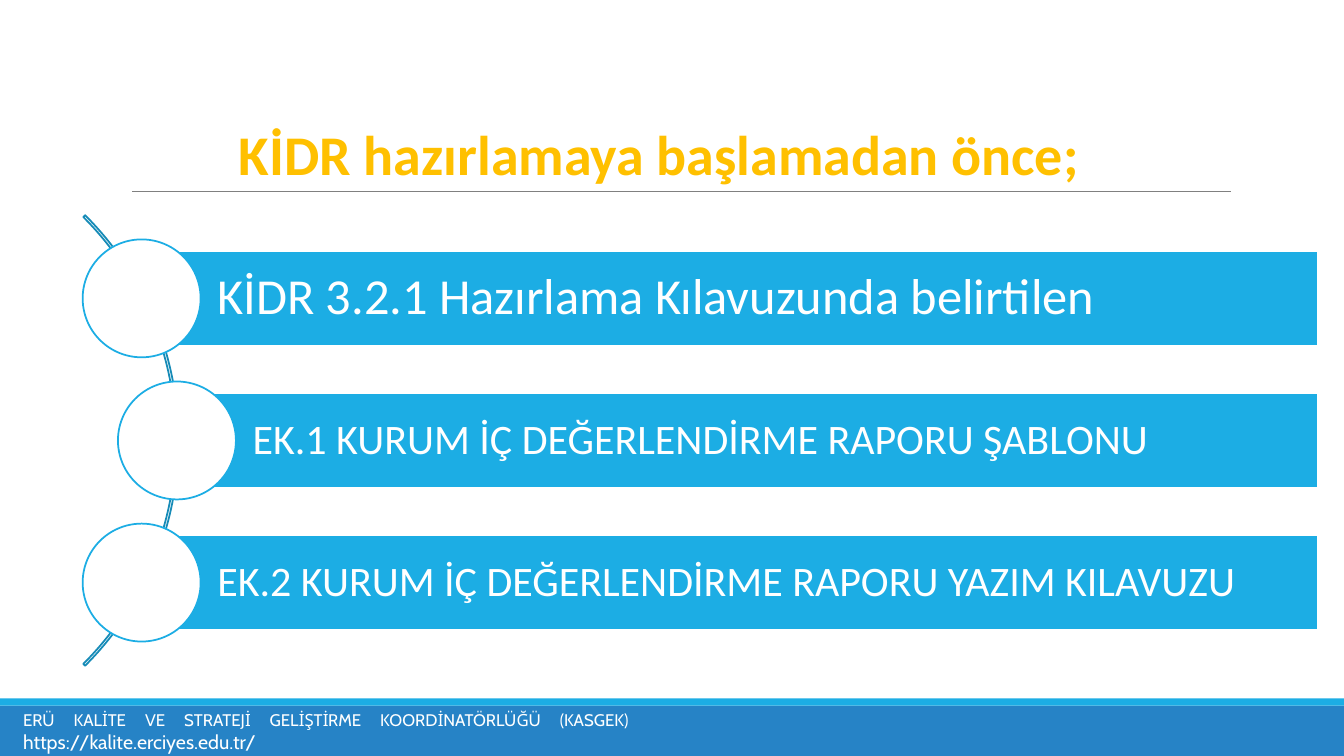
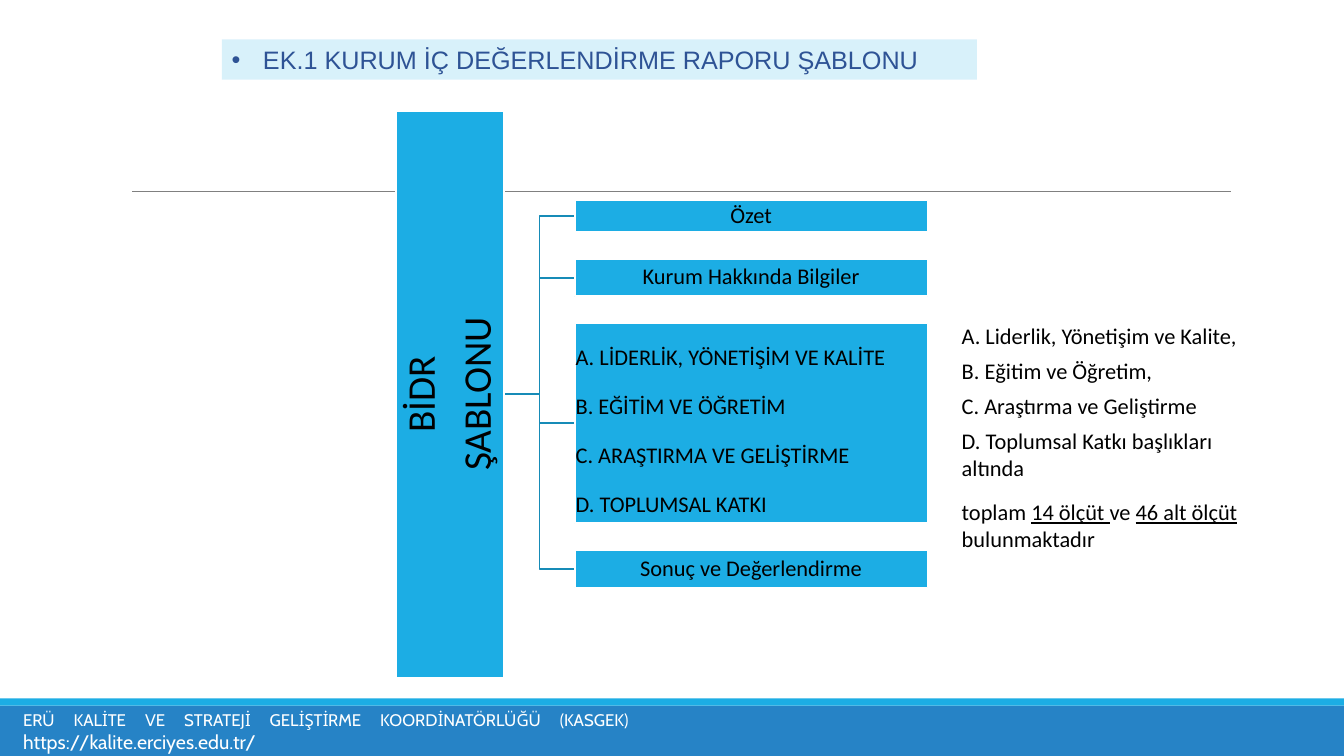
import dataclasses

import pptx
import pptx.dml.color
import pptx.enum.shapes
import pptx.enum.text
import pptx.oxml
import pptx.oxml.ns
import pptx.util

Inches, Pt = pptx.util.Inches, pptx.util.Pt
SHAPE = pptx.enum.shapes.MSO_SHAPE
ALIGN = pptx.enum.text.PP_ALIGN
ANCHOR = pptx.enum.text.MSO_ANCHOR


@dataclasses.dataclass(frozen=True)
class Theme:
    accent: str = "1CADE4"
    band: str = "2683C6"
    branch: str = "168BB7"
    rule: str = "808080"
    title: str = "FFC000"
    heading: str = "2E5395"
    white: str = "FFFFFF"
    black: str = "000000"
    body_font: str = "Calibri"
    heading_font: str = "Arial"
    footer_font: str = "Cabin"
    title_size: float = 40
    lead_size: float = 36
    item_size: float = 30
    label_size: float = 28
    heading_size: float = 18
    body_size: float = 16
    url_size: float = 14
    footer_size: float = 12
    line_width: float = 1.25
    rule_width: float = 0.5


T = Theme()
SLIDE_W, SLIDE_H = 13.33, 7.5


def rgb(value):
    return pptx.dml.color.RGBColor.from_string(value)


def set_outline(s, color, width=T.line_width):
    s.line.color.rgb = rgb(color)
    s.line.width = Pt(width)


def add_box(slide, box, fill=None, line=None, shape=SHAPE.RECTANGLE):
    s = slide.shapes.add_shape(shape, *map(Inches, box))
    s.shadow.inherit = False
    if fill:
        s.fill.solid()
        s.fill.fore_color.rgb = rgb(fill)
    else:
        s.fill.background()
    if line:
        set_outline(s, line)
    else:
        s.line.fill.background()
    return s


def write(s, paragraphs, size, color, font=T.body_font, bold=False,
          anchor=ANCHOR.MIDDLE, insets=(0.1, 0.05, 0.1, 0.05), **formats):
    """Fill a shape; a paragraph is a string or a list of (text, font values)."""
    tf = s.text_frame
    tf.word_wrap = True
    tf.vertical_anchor = anchor
    for side, inset in zip(("left", "top", "right", "bottom"), insets):
        setattr(tf, f"margin_{side}", Inches(inset))
    for i, content in enumerate(paragraphs):
        p = tf.paragraphs[0] if i == 0 else tf.add_paragraph()
        for name, value in ({"alignment": ALIGN.LEFT} | formats).items():
            if i or name != "space_before":
                setattr(p, name, value)
        runs = [(content, {})] if isinstance(content, str) else content
        for text, changes in runs:
            r = p.add_run()
            r.text = text
            values = {"name": font, "size": Pt(size), "bold": bold} | changes
            for name, value in values.items():
                setattr(r.font, name, value)
            r.font.color.rgb = rgb(color)
    return tf


def add_text(slide, box, paragraphs, size, color, **formats):
    s = slide.shapes.add_textbox(*map(Inches, box))
    return write(s, paragraphs, size, color, **formats)


def add_frame(slide):
    """Place the bands and the rule that every slide has."""
    add_box(slide, (0, 7, SLIDE_W, 0.5), T.band)
    add_box(slide, (0, 6.93, SLIDE_W, 0.07), T.accent)
    rule = slide.shapes.add_connector(
        pptx.enum.shapes.MSO_CONNECTOR.STRAIGHT,
        *map(Inches, (1.31, 1.9, 12.21, 1.9)))
    set_outline(rule, T.rule, T.rule_width)
    rule._element.spPr.append(pptx.oxml.parse_xml(
        f"<a:effectLst {pptx.oxml.ns.nsdecls('a')}/>"))


def add_footer(slide):
    add_text(slide, (0.13, 7.06, 6.21, 0.4), [[
        ("ERÜ KALİTE VE STRATEJİ GELİŞTİRME KOORDİNATÖRLÜĞÜ (KASGEK) ", {}),
        ("https://kalite.erciyes.edu.tr/", {"size": Pt(T.url_size)}),
    ]], T.footer_size, T.white, font=T.footer_font, alignment=ALIGN.JUSTIFY)


def add_curved_list(slide, box, items):
    """Place bars with round markers along an arc; items are (text, size)."""
    left, top, width, height = box
    bar_h, marker, inset, pitch = 0.94, 1.17, 0.35, 1.41
    arc_d = 6.32
    arc = add_box(slide, (left - 5.37, top + (height - arc_d) / 2, arc_d, arc_d),
                  line=T.branch, shape=SHAPE.BLOCK_ARC)
    for i, value in enumerate((189, 27, 0.004)):
        arc.adjustments[i] = value
    middle = (len(items) - 1) / 2
    for i, (text, size) in enumerate(items):
        x = left + (inset if i == middle else 0)
        y = top + height / 2 + (i - middle) * pitch
        bar_x = x + marker / 2
        bar = add_box(slide, (bar_x, y - bar_h / 2, left + width - bar_x, bar_h),
                      T.accent, T.white)
        write(bar, [text], size, T.white, insets=(0.75, 0.08, 0.08, 0.08),
              line_spacing=0.9)
        add_box(slide, (x, y - marker / 2, marker, marker),
                T.white, T.accent, SHAPE.OVAL)


def add_heading(slide, box, text):
    s = add_box(slide, box, T.accent)
    color = s.fill._xPr.find(".//" + pptx.oxml.ns.qn("a:srgbClr"))
    color.append(pptx.oxml.parse_xml(
        f"<a:alpha {pptx.oxml.ns.nsdecls('a')} val='17000'/>"))
    tf = write(s, [text], T.heading_size, T.heading, font=T.heading_font)
    pPr = tf.paragraphs[0]._p.get_or_add_pPr()
    pPr.set("marL", str(Inches(0.31)))
    pPr.set("indent", str(-Inches(0.31)))
    ns = pptx.oxml.ns.nsdecls("a")
    pPr.append(pptx.oxml.parse_xml(f"<a:buFont {ns} typeface='Arial'/>"))
    pPr.append(pptx.oxml.parse_xml(f"<a:buChar {ns} char='•'/>"))


def add_branch(slide, start, end):
    (x1, y1), (x2, y2) = start, end
    mid = (x1 + x2) / 2
    points = [(Inches(x), Inches(y))
              for x, y in ((x1, y1), (mid, y1), (mid, y2), (x2, y2))]
    builder = slide.shapes.build_freeform(*points[0])
    builder.add_line_segments(points[1:], close=False)
    s = builder.convert_to_shape()
    s.shadow.inherit = False
    s.fill.background()
    set_outline(s, T.branch)


def add_tree(slide, box, label, sections):
    """Place an upright label with branches; sections are (height, lines)."""
    left, top, width, height = box
    label_w, section_w, gap = 1.07, 3.5, 0.27
    root = (left + label_w, top + height / 2)
    section_x = left + width - section_w
    total = sum(h for h, _ in sections) + gap * (len(sections) - 1)
    y = root[1] - total / 2
    centred = {"alignment": ALIGN.CENTER, "line_spacing": 0.9}
    listed = {"line_spacing": 1.5, "space_before": Pt(6)}
    for section_h, lines in sections:
        add_branch(slide, root, (section_x, y + section_h / 2))
        s = add_box(slide, (section_x, y, section_w, section_h),
                    T.accent, T.white)
        write(s, lines, T.body_size, T.black, insets=(0.01,) * 4,
              **(listed if len(lines) > 1 else centred))
        y += section_h + gap
    s = add_box(slide, (left + (label_w - height) / 2,
                        top + (height - label_w) / 2, height, label_w),
                T.accent, T.white)
    s.rotation = 270
    write(s, label, T.label_size, T.black, insets=(0.02,) * 4,
          space_after=Pt(9.8), **centred)


def build_preparation(slide):
    add_frame(slide)
    add_text(slide, (1.91, 1.14, 9.25, 0.76),
             ["KİDR hazırlamaya başlamadan önce;"], T.title_size, T.title,
             bold=True, anchor=ANCHOR.BOTTOM, alignment=ALIGN.CENTER,
             line_spacing=0.85)
    add_curved_list(slide, (0.82, 2.02, 12.25, 4.7), [
        ("KİDR 3.2.1 Hazırlama Kılavuzunda belirtilen", T.lead_size),
        ("EK.1 KURUM İÇ DEĞERLENDİRME RAPORU ŞABLONU", T.item_size),
        ("EK.2 KURUM İÇ DEĞERLENDİRME RAPORU YAZIM KILAVUZU", T.item_size),
    ])
    add_footer(slide)


def build_template(slide):
    add_frame(slide)
    add_tree(slide, (3.93, 1.1, 5.27, 5.62), ["BİDR", "ŞABLONU"], [
        (0.31, ["Özet"]),
        (0.37, ["Kurum Hakkında Bilgiler"]),
        (1.98, ["A. LİDERLİK, YÖNETİŞİM VE KALİTE", "B. EĞİTİM VE ÖĞRETİM",
                "C. ARAŞTIRMA VE GELİŞTİRME", "D. TOPLUMSAL KATKI"]),
        (0.37, ["Sonuç ve Değerlendirme"]),
    ])
    add_heading(slide, (2.2, 0.39, 7.49, 0.4),
                "EK.1 KURUM İÇ DEĞERLENDİRME RAPORU ŞABLONU")
    add_footer(slide)
    underlined = {"underline": True}
    tf = add_text(slide, (9.44, 3.15, 3.08, 2.41), [
        "A. Liderlik, Yönetişim ve Kalite,",
        "B. Eğitim ve Öğretim,",
        "C. Araştırma ve Geliştirme",
        "D. Toplumsal Katkı başlıkları altında",
        [("toplam ", {}), ("14 ölçüt ", underlined), ("ve ", {}),
         ("46 alt ölçüt ", underlined), ("bulunmaktadır", {})],
    ], T.body_size, T.black, anchor=ANCHOR.TOP, space_before=Pt(5.8))
    tf.paragraphs[-1].space_before = Pt(12)


def main():
    prs = pptx.Presentation()
    prs.slide_width, prs.slide_height = Inches(SLIDE_W), Inches(SLIDE_H)
    for build in (build_preparation, build_template):
        build(prs.slides.add_slide(prs.slide_layouts[6]))
    prs.save("out.pptx")


if __name__ == "__main__":
    main()
